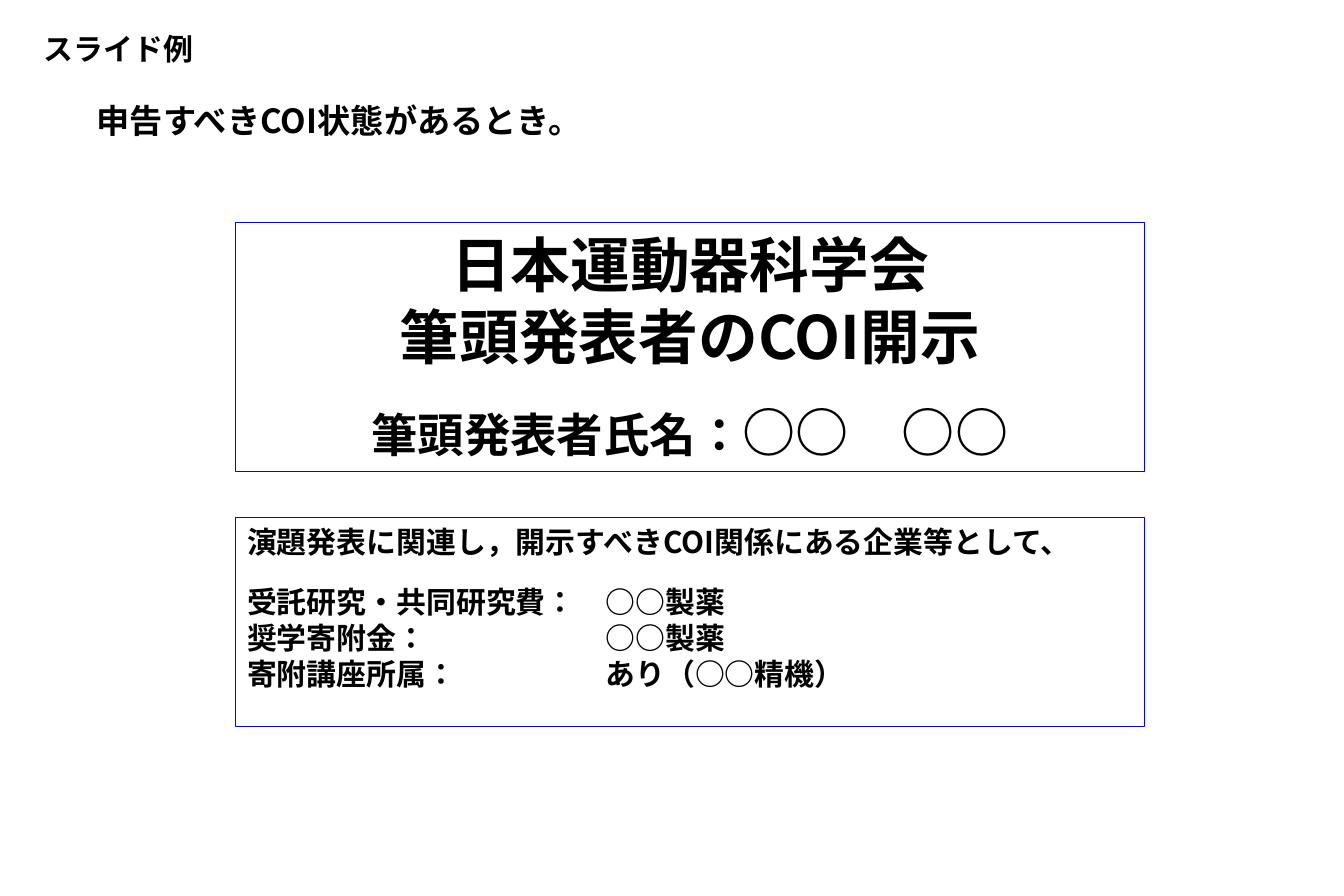
from dataclasses import dataclass

from lxml.etree import SubElement
from pptx import Presentation
from pptx.dml.color import RGBColor
from pptx.enum.lang import MSO_LANGUAGE_ID
from pptx.enum.shapes import MSO_SHAPE
from pptx.enum.text import MSO_ANCHOR, PP_ALIGN
from pptx.oxml.ns import qn
from pptx.slide import Slide
from pptx.text.text import TextFrame, _Paragraph, _Run
from pptx.util import Inches, Pt

BLACK = RGBColor(0x00, 0x00, 0x00)
BLUE = RGBColor(0x00, 0x00, 0xFF)
TYPEFACE = "Noto Sans CJK JP"
ENTRY_COLUMN = Inches(3)
FONT_FORMAT = {
    "name": TYPEFACE,
    "bold": True,
    "language_id": MSO_LANGUAGE_ID.JAPANESE,
}


@dataclass(frozen=True)
class Phrase:
    text: str
    size: float = 18


@dataclass(frozen=True)
class Line:
    phrases: tuple[Phrase, ...]
    space_before: float = 0


@dataclass(frozen=True)
class Block:
    left: float
    top: float
    width: float
    height: float
    lines: tuple[Line, ...]
    align: PP_ALIGN = PP_ALIGN.LEFT
    framed: bool = False
    wrap: bool = True


BLOCKS = (
    Block(1.97, 1.86, 7.61, 2.09, (
        Line((Phrase("日本運動器科学会", 36),)),
        Line((Phrase("筆頭発表者のCOI開示", 36),)),
        Line((Phrase("筆頭発表者氏名：", 28), Phrase("○○　○○", 32)), 17),
    ), align=PP_ALIGN.CENTER, framed=True),
    Block(0.27, 0.21, 1.47, 0.4, (
        Line((Phrase("スライド例"),)),
    ), wrap=False),
    Block(1.97, 4.33, 7.61, 1.75, (
        Line((Phrase("演題発表に関連し，開示すべきCOI関係にある企業等として、"),)),
        Line((Phrase("受託研究・共同研究費：\t○○製薬"),), 15),
        Line((Phrase("奨学寄附金：\t○○製薬"),)),
        Line((Phrase("寄附講座所属：\tあり（○○精機）"),)),
    ), framed=True),
    Block(0.71, 0.79, 8.15, 0.74, (
        Line((Phrase("申告すべきCOI状態があるとき。", 20),)),
    )),
)


def format_run(run: _Run, phrase: Phrase) -> None:
    run.text = phrase.text
    for attribute, value in FONT_FORMAT.items():
        setattr(run.font, attribute, value)
    run.font.size = Pt(phrase.size)
    run.font.color.rgb = BLACK
    SubElement(run.font._element, qn("a:ea"), typeface=TYPEFACE)


def add_entry_tab(paragraph: _Paragraph) -> None:
    tabs = SubElement(paragraph._p.get_or_add_pPr(), qn("a:tabLst"))
    SubElement(tabs, qn("a:tab"), pos=str(ENTRY_COLUMN), algn="l")


def write_lines(frame: TextFrame, block: Block) -> None:
    for index, line in enumerate(block.lines):
        paragraph = frame.add_paragraph() if index else frame.paragraphs[0]
        if any("\t" in phrase.text for phrase in line.phrases):
            add_entry_tab(paragraph)
        paragraph.alignment = block.align
        if line.space_before:
            paragraph.space_before = Pt(line.space_before)
        for phrase in line.phrases:
            format_run(paragraph.add_run(), phrase)


def draw_block(slide: Slide, block: Block) -> None:
    bounds = [Inches(v) for v in (block.left, block.top, block.width, block.height)]
    if block.framed:
        panel = slide.shapes.add_shape(MSO_SHAPE.RECTANGLE, *bounds)
        panel.shadow.inherit = False
        panel.fill.background()
        panel.line.color.rgb = BLUE
        panel.line.width = Pt(0.75)
    else:
        panel = slide.shapes.add_textbox(*bounds)
    panel.text_frame.word_wrap = block.wrap
    panel.text_frame.vertical_anchor = MSO_ANCHOR.TOP
    write_lines(panel.text_frame, block)


def main() -> None:
    presentation = Presentation()
    presentation.slide_width = Inches(11.25)
    presentation.slide_height = Inches(7.5)
    slide = presentation.slides.add_slide(presentation.slide_layouts[6])
    for block in BLOCKS:
        draw_block(slide, block)
    presentation.save("out.pptx")


if __name__ == "__main__":
    main()
